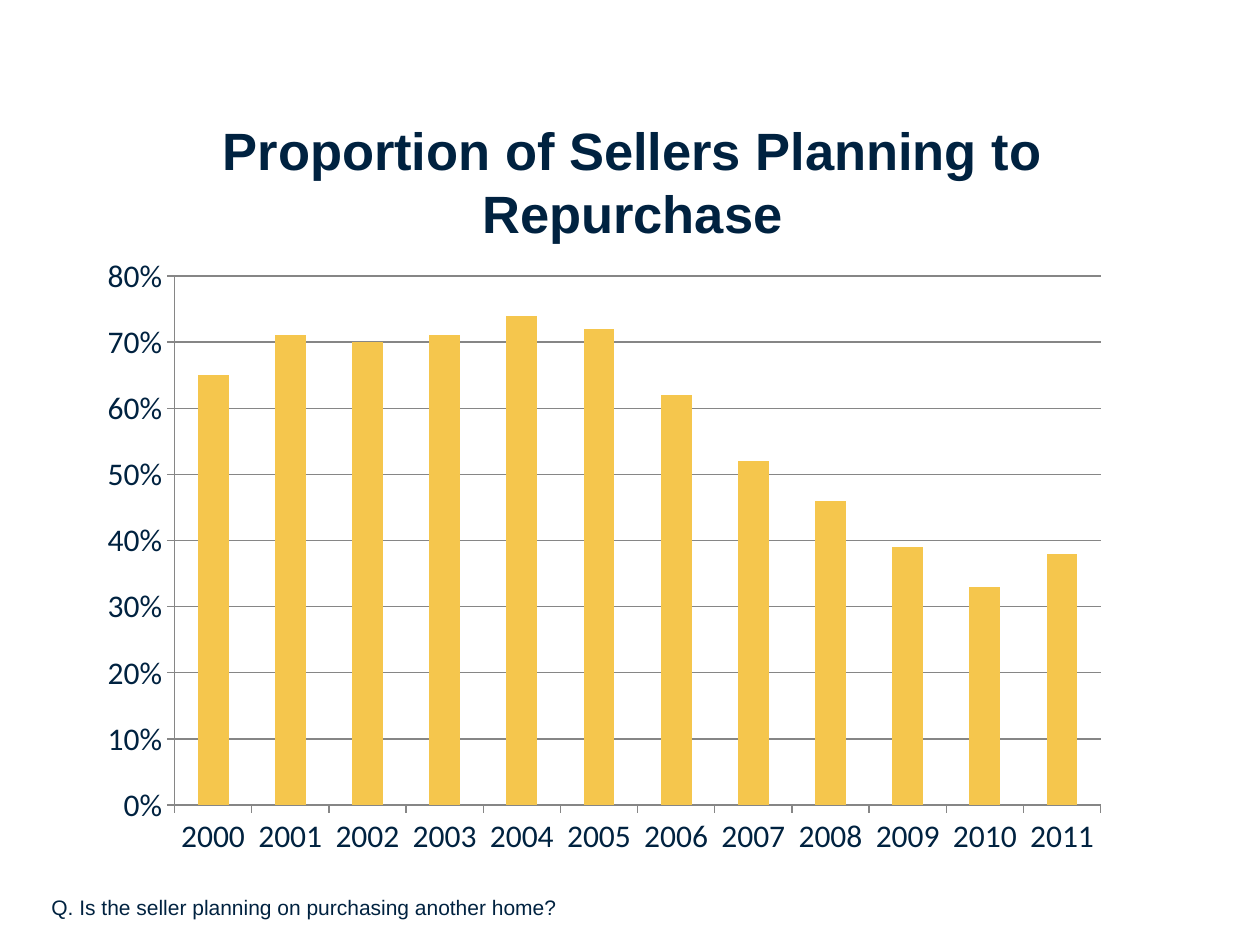
from typing import NamedTuple

from pptx import Presentation
from pptx.chart.data import CategoryChartData
from pptx.dml.color import RGBColor
from pptx.enum.chart import XL_CHART_TYPE as ChartType, XL_TICK_MARK as TickMark
from pptx.enum.text import MSO_ANCHOR as Anchor, MSO_AUTO_SIZE as AutoSize, PP_ALIGN as Align
from pptx.util import Inches, Pt

COLORS = {"navy": "002240", "gold": "F5C64D", "grid": "868686", "white": "FFFFFF"}


class Box(NamedTuple):
    left: float
    top: float
    width: float
    height: float

    def lengths(self) -> list:
        return [Inches(value) for value in self]


class YearShare(NamedTuple):
    year: int
    share: float


TITLE_BOX = Box(1.46, 0.89, 7.12, 0.76)
CHART_BOX = Box(0.69, 1.94, 8.21, 4.95)
QUESTION_BOX = Box(0.31, 7.05, 6.92, 0.3)

SHARES = (0.65, 0.71, 0.70, 0.71, 0.74, 0.72, 0.62, 0.52, 0.46, 0.39, 0.33, 0.38)
REPURCHASE = [YearShare(year, share) for year, share in enumerate(SHARES, start=2000)]


def rgb(name: str) -> RGBColor:
    return RGBColor.from_string(COLORS[name])


def format_font(font, *, name: str, size: float, color: str = "navy", bold: bool = False) -> None:
    font.name, font.size, font.bold = name, Pt(size), bold
    font.color.rgb = rgb(color)


def write_text(shape, text: str, *, size: float, bold: bool = False,
               align=Align.LEFT, auto_size=AutoSize.NONE) -> None:
    frame = shape.text_frame
    frame.word_wrap = True
    frame.auto_size = auto_size
    frame.vertical_anchor = Anchor.TOP
    paragraph = frame.paragraphs[0]
    paragraph.alignment = align
    run = paragraph.add_run()
    run.text = text
    format_font(run.font, name="Arial", size=size, bold=bold)


def format_line(line) -> None:
    line.color.rgb = rgb("grid")
    line.width = Pt(0.75)


def add_share_chart(slide, box: Box, rows: list[YearShare]) -> None:
    data = CategoryChartData(number_format="0%")
    data.categories = [str(row.year) for row in rows]
    data.add_series("Series 1", [row.share for row in rows])
    chart = slide.shapes.add_chart(ChartType.COLUMN_CLUSTERED, *box.lengths(), data).chart
    chart.has_title = False
    chart.has_legend = False
    format_font(chart.font, name="Calibri", size=18)

    plot = chart.plots[0]
    plot.gap_width = 150
    plot.vary_by_categories = False
    fill = plot.series[0].format.fill
    fill.solid()
    fill.fore_color.rgb = rgb("gold")

    for axis in (chart.category_axis, chart.value_axis):
        axis.major_tick_mark = TickMark.OUTSIDE
        axis.minor_tick_mark = TickMark.NONE
        format_line(axis.format.line)

    value_axis = chart.value_axis
    value_axis.minimum_scale, value_axis.maximum_scale = 0, 0.8
    value_axis.major_unit = 0.1
    value_axis.tick_labels.number_format = "0%"
    value_axis.tick_labels.number_format_is_linked = False
    value_axis.has_major_gridlines = True
    format_line(value_axis.major_gridlines.format.line)


def main() -> None:
    presentation = Presentation()
    presentation.slide_width, presentation.slide_height = Inches(10), Inches(7.5)
    title_only = presentation.slide_layouts[5]
    slide = presentation.slides.add_slide(title_only)
    background = slide.background.fill
    background.solid()
    background.fore_color.rgb = rgb("white")

    title = slide.shapes.title
    title.left, title.top, title.width, title.height = TITLE_BOX.lengths()
    write_text(title, "Proportion of Sellers Planning to Repurchase",
               size=30, bold=True, align=Align.CENTER)

    add_share_chart(slide, CHART_BOX, REPURCHASE)

    question = slide.shapes.add_textbox(*QUESTION_BOX.lengths())
    write_text(question, "Q. Is the seller planning on purchasing another home?",
               size=12, auto_size=AutoSize.SHAPE_TO_FIT_TEXT)

    presentation.save("out.pptx")


if __name__ == "__main__":
    main()
